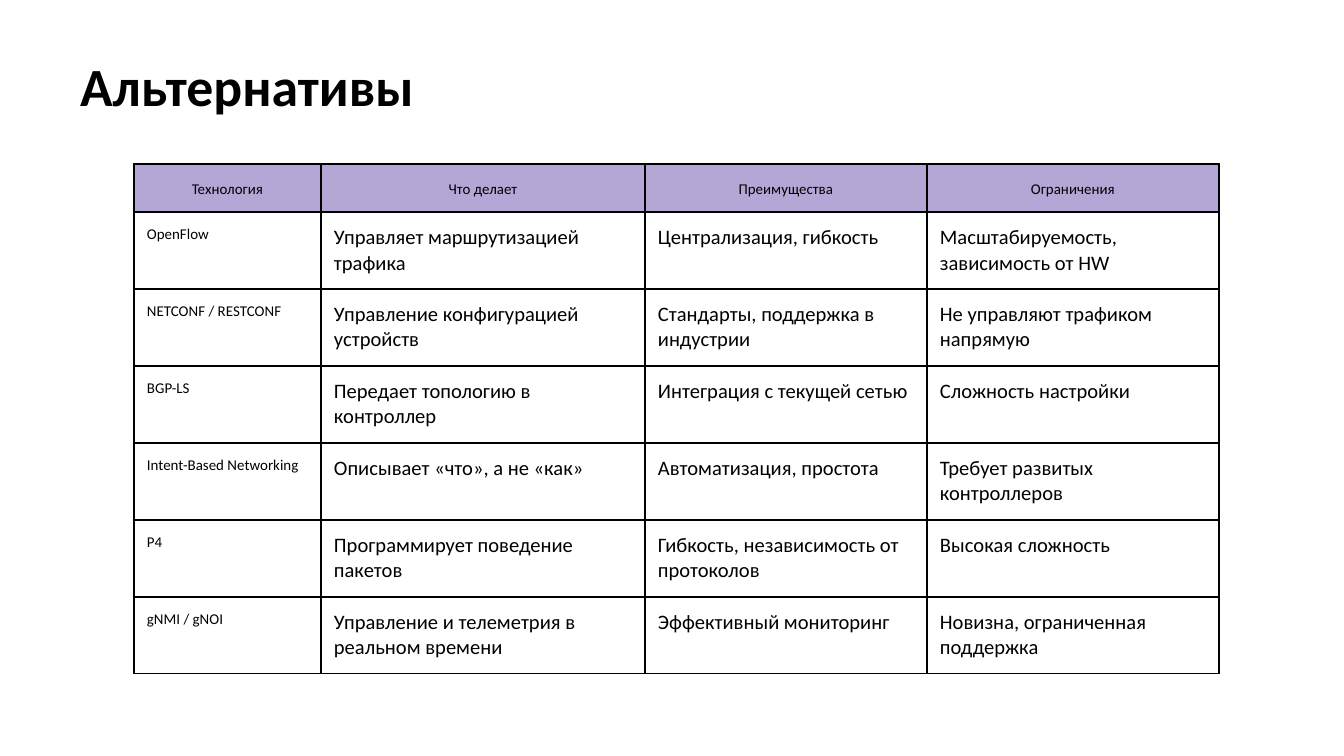
"""Build a slide with a table of alternative network control technologies."""
from lxml import etree
from pptx import Presentation
from pptx.dml.color import RGBColor
from pptx.enum.text import MSO_ANCHOR, PP_ALIGN
from pptx.oxml.ns import qn
from pptx.util import Emu, Pt

MIDDLE = MSO_ANCHOR.MIDDLE
CENTER, LEFT = PP_ALIGN.CENTER, PP_ALIGN.LEFT
BLACK = RGBColor(0x00, 0x00, 0x00)
LILAC = RGBColor(0xB4, 0xA7, 0xD6)
SCALE = 914400 / 134.4

WIDTHS = [187, 324, 282, 292]
HEAD, BODY = 48, 77
ROWS = [
    ["Технология", "Что делает", "Преимущества", "Ограничения"],
    ["OpenFlow", "Управляет маршрутизацией трафика",
     "Централизация, гибкость", "Масштабируемость, зависимость от HW"],
    ["NETCONF / RESTCONF", "Управление конфигурацией устройств",
     "Стандарты, поддержка в индустрии", "Не управляют трафиком напрямую"],
    ["BGP-LS", "Передает топологию в контроллер",
     "Интеграция с текущей сетью", "Сложность настройки"],
    ["Intent-Based Networking", "Описывает «что», а не «как»",
     "Автоматизация, простота", "Требует развитых контроллеров"],
    ["P4", "Программирует поведение пакетов",
     "Гибкость, независимость от протоколов", "Высокая сложность"],
    ["gNMI / gNOI", "Управление и телеметрия в реальном времени",
     "Эффективный мониторинг", "Новизна, ограниченная поддержка"],
]


def px(n):
    return Emu(round(n * SCALE))


def write(para, text, size, bold=False):
    run = para.add_run()
    run.text = text
    look = {"name": "Calibri", "size": Pt(size), "bold": bold}
    for key, value in look.items():
        setattr(run.font, key, value)
    run.font.color.rgb = BLACK


deck = Presentation()
deck.slide_width, deck.slide_height = px(1344), px(756)
slide = deck.slides.add_slide(deck.slide_layouts[6])

title = slide.shapes.add_textbox(px(67), px(46), px(1003), px(78)).text_frame
title.word_wrap = True
title.vertical_anchor = MIDDLE
write(title.paragraphs[0], "Альтернативы", 28.8, True)

high = HEAD + BODY * (len(ROWS) - 1)
table = slide.shapes.add_table(
    len(ROWS), len(WIDTHS), px(134), px(164), px(sum(WIDTHS)), px(high)).table
table.first_row = table.horz_banding = False
for col, width in zip(table.columns, WIDTHS):
    col.width = px(width)

sides = ["margin_left", "margin_top", "margin_right", "margin_bottom"]
pad = dict.fromkeys(sides, px(13))
for r, row in enumerate(ROWS):
    top = r == 0
    table.rows[r].height = px(HEAD if top else BODY)
    for c, text in enumerate(row):
        cell = table.cell(r, c)
        for key, value in pad.items():
            setattr(cell, key, value)
        props = cell._tc.get_or_add_tcPr()
        for tag in ("a:lnL", "a:lnR", "a:lnT", "a:lnB"):
            line = etree.SubElement(props, qn(tag), w=str(Pt(0.75)))
            fill = etree.SubElement(line, qn("a:solidFill"))
            etree.SubElement(fill, qn("a:srgbClr"), val=str(BLACK))
        if top:
            cell.fill.solid()
            cell.fill.fore_color.rgb = LILAC
        else:
            cell.fill.background()
        para = cell.text_frame.paragraphs[0]
        para.alignment = CENTER if top else LEFT
        para.line_spacing = 1.15 if top else 1.0
        write(para, text, 8 if top or c == 0 else 11)

deck.save("out.pptx")
